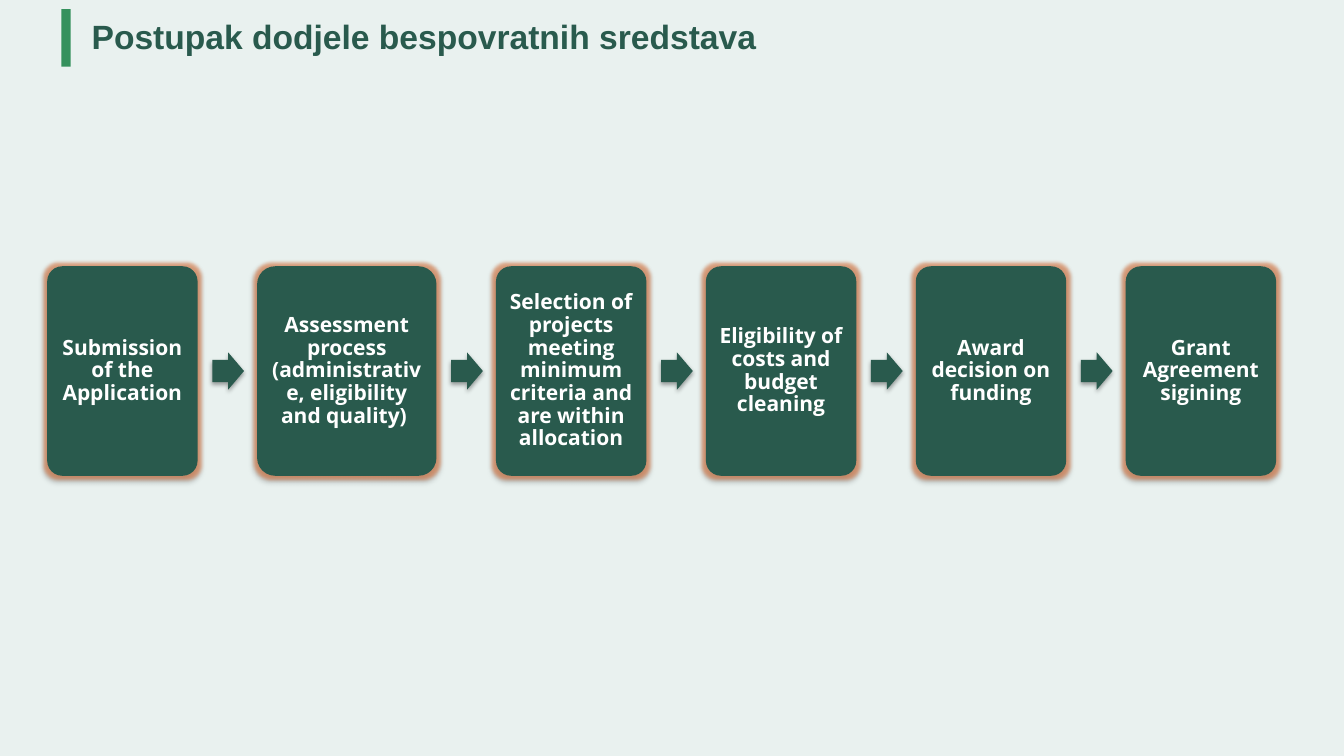
from dataclasses import dataclass

from lxml.etree import SubElement
from pptx import Presentation
from pptx.dml.color import RGBColor
from pptx.enum.shapes import MSO_SHAPE as Shape
from pptx.enum.text import MSO_ANCHOR as Anchor, PP_ALIGN as Align
from pptx.oxml.ns import qn
from pptx.util import Cm, Pt

TITLE = "Postupak dodjele bespovratnih sredstava"
NARROW, WIDE = 3.79, 4.52
STEPS = [
    ("Submission of the Application", NARROW),
    ("Assessment process (administrative, eligibility and quality) ", WIDE),
    ("Selection of projects meeting minimum criteria and are within allocation", NARROW),
    ("Eligibility of costs and budget cleaning", NARROW),
    ("Award decision on funding", NARROW),
    ("Grant Agreement sigining", NARROW),
]


@dataclass(frozen=True)
class Theme:
    background: str = "E9F1EF"
    dark: str = "295A4D"
    accent: str = "35915D"
    light: str = "FFFFFF"
    glow: str = "E07B45"
    shadow: str = "000000"
    title_font: str = "Arial"
    step_font: str = "Open Sans"
    title_size: int = 24
    step_size: int = 15


THEME = Theme()
FIRST_LEFT, STEP_TOP, STEP_HEIGHT, STEP_GAP = 1.19, 6.71, 5.28, 1.5
ARROW_WIDTH, ARROW_HEIGHT, ARROW_OFFSET = 0.8, 0.94, 0.37
STEP_INSET = 0.15


def add_effect(effects, tag, color, alpha, **attributes):
    effect = SubElement(effects, qn(tag), {k: str(v) for k, v in attributes.items()})
    tint = SubElement(effect, qn("a:srgbClr"), val=color)
    SubElement(tint, qn("a:alpha"), val=str(alpha * 1000))


def add_block(slide, kind, left, top, width, height, color):
    block = slide.shapes.add_shape(kind, Cm(left), Cm(top), Cm(width), Cm(height))
    block.shadow.inherit = False
    block.fill.solid()
    block.fill.fore_color.rgb = RGBColor.from_string(color)
    block.line.fill.background()
    return block


def add_effects(block, glowing=False):
    effects = block._element.spPr.find(qn("a:effectLst"))
    if glowing:
        add_effect(effects, "a:glow", THEME.glow, 60, rad=Pt(5))
    add_effect(effects, "a:outerShdw", THEME.shadow, 35, blurRad=Pt(3.1),
               dist=Pt(1.8), dir=90 * 60000, rotWithShape=0)


def write(box, text, font, size, color, align):
    frame = box.text_frame
    frame.word_wrap = True
    frame.vertical_anchor = Anchor.MIDDLE
    para = frame.paragraphs[0]
    para.alignment = align
    para.line_spacing = 0.9
    span = para.add_run()
    span.text = text
    span.font.name = font
    span.font.size = Pt(size)
    span.font.bold = True
    span.font.color.rgb = RGBColor.from_string(color)


def add_title(slide):
    box = slide.shapes.add_textbox(Cm(2.06), Cm(0), Cm(29.21), Cm(1.96))
    write(box, TITLE, THEME.title_font, THEME.title_size, THEME.dark, Align.LEFT)
    add_block(slide, Shape.RECTANGLE, 1.55, 0.23, 0.23, 1.45, THEME.accent)


def add_step(slide, text, left, width):
    box = add_block(slide, Shape.ROUNDED_RECTANGLE, left, STEP_TOP, width,
                    STEP_HEIGHT, THEME.dark)
    box.adjustments[0] = 0.1
    add_effects(box, glowing=True)
    frame = box.text_frame
    frame.margin_left = frame.margin_right = Cm(STEP_INSET)
    frame.margin_top = frame.margin_bottom = Cm(STEP_INSET)
    write(box, text, THEME.step_font, THEME.step_size, THEME.light, Align.CENTER)


def add_arrow(slide, left):
    top = STEP_TOP + (STEP_HEIGHT - ARROW_HEIGHT) / 2
    arrow = add_block(slide, Shape.RIGHT_ARROW, left, top, ARROW_WIDTH,
                      ARROW_HEIGHT, THEME.dark)
    arrow.adjustments[0] = 0.6
    arrow.adjustments[1] = 0.5
    add_effects(arrow)


def main():
    deck = Presentation()
    deck.slide_width, deck.slide_height = Cm(33.87), Cm(19.05)
    page = deck.slides.add_slide(deck.slide_layouts[6])
    page.background.fill.solid()
    page.background.fill.fore_color.rgb = RGBColor.from_string(THEME.background)
    add_title(page)
    left = FIRST_LEFT
    for number, (text, width) in enumerate(STEPS, start=1):
        add_step(page, text, left, width)
        if number < len(STEPS):
            add_arrow(page, left + width + ARROW_OFFSET)
        left += width + STEP_GAP
    deck.save("out.pptx")


if __name__ == "__main__":
    main()
